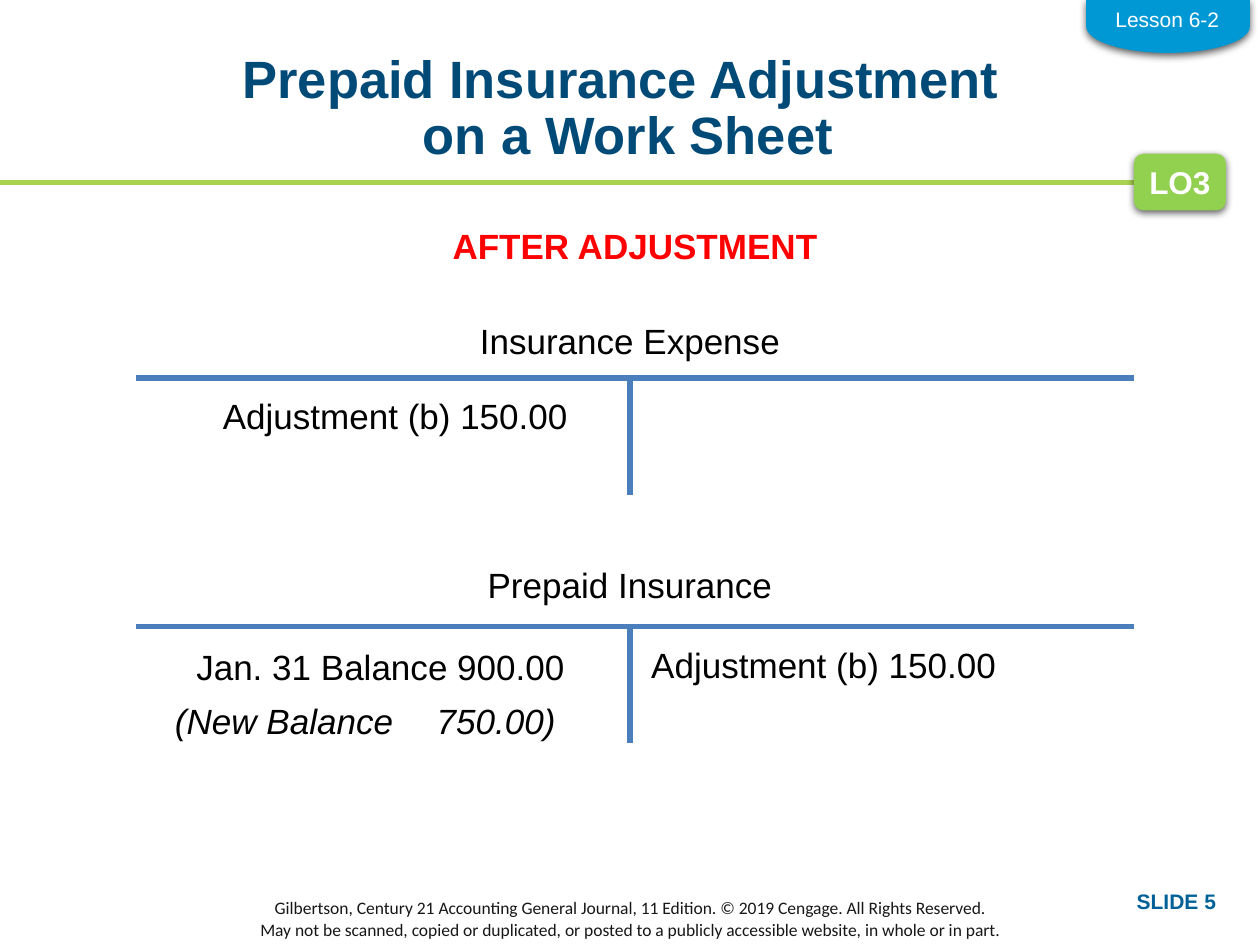
"""Build the prepaid insurance adjustment slide with its two T accounts."""
from dataclasses import dataclass

from lxml import etree
from pptx import Presentation
from pptx import util as u
from pptx.dml.color import RGBColor
from pptx.enum import shapes, text
from pptx.oxml import parse_xml
from pptx.oxml.ns import nsdecls, qn

COLORS = {
    "title": "004A78",
    "rule": "A9D24E",
    "account": "4B7EBC",
    "badge": "92D050",
    "lesson": "0098D4",
    "slide_number": "006198",
    "footer": "181717",
    "alert": "FF0000",
    "black": "000000",
    "white": "FFFFFF",
}
CENTER = text.PP_ALIGN.CENTER
LEFT = text.PP_ALIGN.LEFT
RIGHT = text.PP_ALIGN.RIGHT


@dataclass
class Style:
    size: float = 20
    color: str = "black"
    bold: bool = False
    italic: bool = False
    font: str = "Arial"
    align: text.PP_ALIGN = LEFT


@dataclass
class Label:
    words: str
    left: float
    top: float
    width: float
    height: float
    style: Style
    wrap: bool = True
    tabs: tuple = ()
    anchor: text.MSO_ANCHOR = text.MSO_ANCHOR.TOP


@dataclass
class Account:
    name: str
    name_top: float
    bar_top: float
    stem_bottom: float


@dataclass
class Badge:
    kind: shapes.MSO_SHAPE
    left: float
    top: float
    width: float
    height: float
    color: str
    rotation: float = 0


ENTRY = Style()
HEADING = Style(align=CENTER)
ENTRY_TABS = (2.5, 3.38)
FOOTER = (
    "Gilbertson, Century 21 Accounting General Journal, 11 Edition. © 2019 Cengage. All Rights Reserved.\n"
    "May not be scanned, copied or duplicated, or posted to a publicly accessible website, in whole or in part."
)
ACCOUNTS = [
    Account("Insurance Expense", 2.49, 3, 3.93),
    Account("Prepaid Insurance", 4.42, 4.97, 5.9),
]
LABELS = [
    Label(FOOTER, 0, 7.14, 10, 0.3, Style(10, "footer", font="Calibri", align=CENTER),
          anchor=text.MSO_ANCHOR.MIDDLE),
    Label("AFTER ADJUSTMENT", 3.47, 1.73, 3.14, 0.44,
          Style(color="alert", bold=True, align=CENTER), wrap=False),
    Label("Adjustment (b) 150.00", 1.67, 3.08, 3.08, 0.44, ENTRY),
    Label("Jan. 31 Balance 900.00", 1.46, 5.07, 3.13, 0.44, ENTRY),
    Label("(New Balance\t 750.00)", 1.29, 5.5, 3.29, 0.44, Style(italic=True), tabs=ENTRY_TABS),
    Label("Adjustment (b) 150.00", 5.07, 5.06, 3.08, 0.44, ENTRY),
    Label("SLIDE 5", 7.75, 7, 2, 0.3, Style(12, "slide_number", bold=True, align=RIGHT)),
]
LESSON = Label("Lesson 6-2", 8.75, 0, 1.03, 0.3, Style(12, "white", align=CENTER), wrap=False)
OBJECTIVE = Style(18, "white", bold=True, align=CENTER)


def rgb(name: str) -> RGBColor:
    return RGBColor.from_string(COLORS[name])


def format_paragraph(paragraph, style: Style) -> None:
    paragraph.alignment = style.align
    for run in paragraph.runs:
        run.font.name = style.font
        run.font.size = u.Pt(style.size)
        run.font.bold = style.bold
        run.font.italic = style.italic
        run.font.color.rgb = rgb(style.color)


def add_decimal_tabs(paragraph, positions: tuple) -> None:
    properties = paragraph._p.get_or_add_pPr()
    properties.set("marL", "0")
    properties.set("indent", str(-u.Inches(0.38)))
    tab_list = etree.SubElement(properties, qn("a:tabLst"))
    for position in positions:
        etree.SubElement(tab_list, qn("a:tab"), pos=str(u.Inches(position)), algn="dec")


def add_label(slide, label: Label) -> None:
    box = slide.shapes.add_textbox(
        u.Inches(label.left), u.Inches(label.top), u.Inches(label.width), u.Inches(label.height))
    frame = box.text_frame
    frame.word_wrap = label.wrap
    frame.vertical_anchor = label.anchor
    frame.text = label.words
    for paragraph in frame.paragraphs:
        if label.tabs:
            add_decimal_tabs(paragraph, label.tabs)
        format_paragraph(paragraph, label.style)


def add_line(slide, start: tuple, end: tuple, color: str) -> None:
    line = slide.shapes.add_connector(
        shapes.MSO_CONNECTOR.STRAIGHT, *(u.Inches(value) for value in start + end))
    line.line.color.rgb = rgb(color)
    line.line.width = u.Pt(3)
    etree.SubElement(line._element.spPr, qn("a:effectLst"))


def add_account(slide, account: Account) -> None:
    add_label(slide, Label(account.name, 2, account.name_top, 6, 0.44, HEADING))
    add_line(slide, (1.08, account.bar_top), (9, account.bar_top), "account")
    add_line(slide, (5, account.bar_top), (5, account.stem_bottom), "account")


def add_badge(slide, badge: Badge):
    shape = slide.shapes.add_shape(
        badge.kind, u.Inches(badge.left), u.Inches(badge.top),
        u.Inches(badge.width), u.Inches(badge.height))
    shape.rotation = badge.rotation
    shape.fill.solid()
    shape.fill.fore_color.rgb = rgb(badge.color)
    shape.line.fill.background()
    shape._element.spPr.append(parse_xml(
        f'<a:effectLst {nsdecls("a")}><a:outerShdw blurRad="{u.Pt(4.5)}" dist="{u.Pt(1.5)}" '
        f'dir="5400000" algn="ctr" rotWithShape="0"><a:srgbClr val="{COLORS["black"]}">'
        '<a:alpha val="63000"/></a:srgbClr></a:outerShdw></a:effectLst>'))
    return shape


def set_title(slide) -> None:
    title = slide.shapes.title
    title.left, title.top = u.Inches(0.4), u.Inches(0.42)
    title.width, title.height = u.Inches(9.17), u.Inches(1.1)
    frame = title.text_frame
    frame.margin_left = frame.margin_right = frame.margin_top = frame.margin_bottom = 0
    frame.vertical_anchor = text.MSO_ANCHOR.TOP
    frame.auto_size = text.MSO_AUTO_SIZE.NONE
    frame.text = "Prepaid Insurance Adjustment \von a Work Sheet"
    frame.paragraphs[0].line_spacing = 0.9
    format_paragraph(frame.paragraphs[0], Style(30, "title", bold=True, align=CENTER))


def main() -> None:
    presentation = Presentation()
    presentation.slide_width, presentation.slide_height = u.Inches(10), u.Inches(7.5)
    slide = presentation.slides.add_slide(presentation.slide_layouts[5])
    add_line(slide, (0, 1.45), (9.5, 1.45), "rule")
    set_title(slide)
    for account in ACCOUNTS:
        add_account(slide, account)
    for label in LABELS:
        add_label(slide, label)
    objective = add_badge(
        slide, Badge(shapes.MSO_SHAPE.ROUNDED_RECTANGLE, 9, 1.22, 0.73, 0.45, "badge"))
    objective.text_frame.word_wrap = False
    objective.text_frame.text = "LO3"
    format_paragraph(objective.text_frame.paragraphs[0], OBJECTIVE)
    add_badge(slide, Badge(
        shapes.MSO_SHAPE.FLOWCHART_DELAY, 9.06, -0.44, 0.42, 1.3, "lesson", rotation=90))
    add_label(slide, LESSON)
    presentation.save("out.pptx")


if __name__ == "__main__":
    main()
